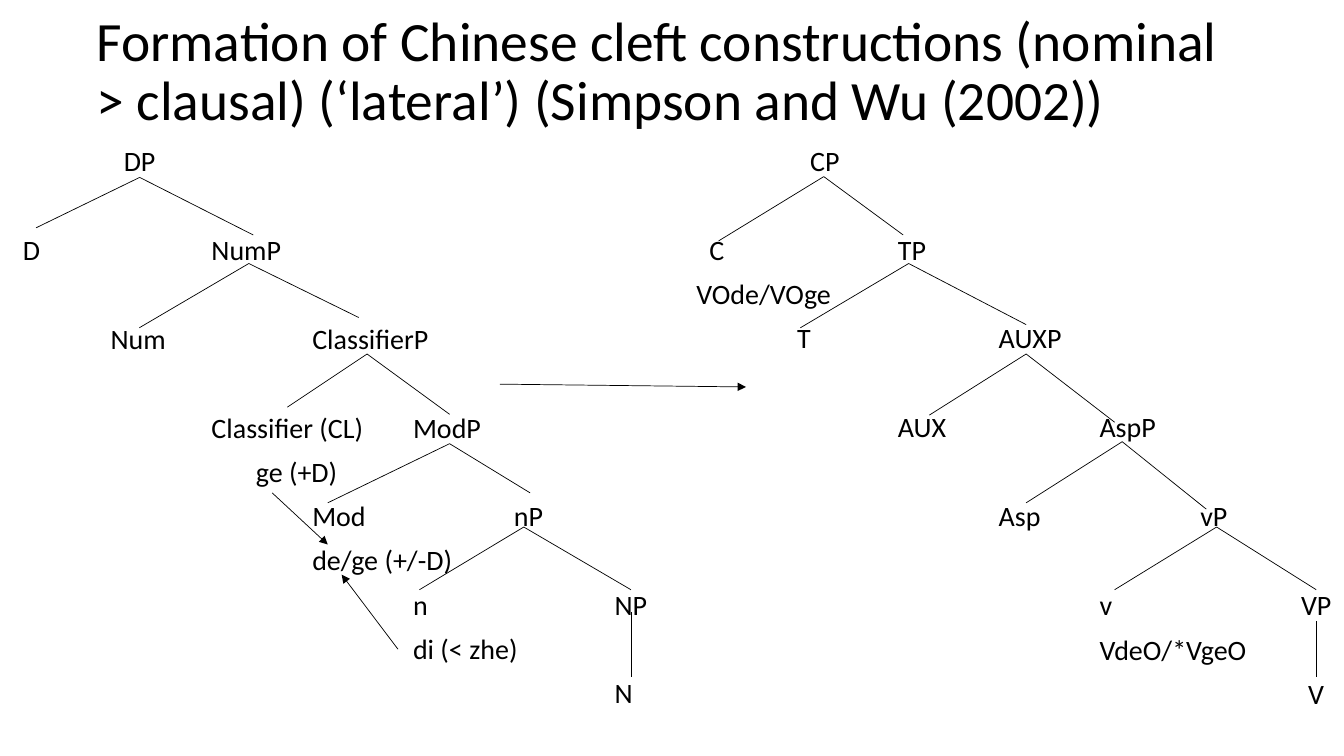
from dataclasses import dataclass

from lxml.etree import SubElement
from pptx import Presentation
from pptx.dml.color import RGBColor
from pptx.enum.shapes import MSO_CONNECTOR
from pptx.enum.text import MSO_ANCHOR, MSO_AUTO_SIZE, PP_ALIGN
from pptx.oxml.ns import qn
from pptx.util import Cm, Pt


@dataclass(frozen=True)
class Theme:
    ink: RGBColor = RGBColor(0, 0, 0)
    font: str = "Calibri"
    title_size: float = 39.6
    label_size: float = 20
    line_spacing: float = 0.9
    row_gap: float = 10
    row_pitch: float = 31.97
    column: float = 2.54
    branch_width: float = 0.5


TITLE = (
    "Formation of Chinese cleft constructions (nominal > clausal) "
    "(‘lateral’) (Simpson and Wu (2002))"
)

NOMINAL_LABELS = [
    (0, [(1.13, "DP")]),
    (2, [(0.13, "D"), (2, "NumP")]),
    (4, [(1, "Num"), (3, "ClassifierP")]),
    (6, [(2, "Classifier (CL)"), (4, "ModP")]),
    (7, [(2.44, "ge (+D)")]),
    (8, [(3, "Mod"), (5, "nP")]),
    (9, [(3, "de/ge (+/-D)")]),
    (10, [(4, "n"), (6, "NP")]),
    (11, [(4, "di (< zhe)")]),
    (12, [(6, "N")]),
]
CLAUSAL_LABELS = [
    (0, [(1.13, "CP")]),
    (2, [(0.13, "C"), (2, "TP")]),
    (3, [(0, "VOde/VOge")]),
    (4, [(1, "T"), (3, "AUXP")]),
    (6, [(2, "AUX"), (4, "AspP")]),
    (8, [(3, "Asp"), (5, "vP")]),
    (10, [(4, "v"), (6, "VP")]),
    (11, [(4, "VdeO/*VgeO")]),
    (12, [(6.07, "V")]),
]

NOMINAL_BRANCHES = [
    ((3.52, 4.47), (0.91, 5.74), (6.38, 5.92)),
    ((6.27, 6.64), (3.51, 8.26), (9.04, 8.0)),
    ((9.25, 8.92), (7.24, 10.26), (11.33, 10.44)),
    ((11.33, 11.18), (8.26, 12.67), (13.36, 12.42)),
    ((13.2, 13.28), (10.57, 14.86), (15.9, 14.86)),
    ((15.9, 15.42), (15.9, 17.07)),
]
CLAUSAL_BRANCHES = [
    ((20.76, 4.45), (18.11, 6.07), (22.76, 5.92)),
    ((22.9, 6.64), (20.17, 8.26), (25.86, 8.18)),
    ((25.86, 8.92), (23.42, 10.46), (28.09, 10.64)),
    ((28.28, 11.13), (25.86, 12.67), (30.4, 12.83)),
    ((30.66, 13.28), (28.09, 14.86), (33.17, 14.86)),
    ((33.17, 15.65), (33.17, 17.07)),
]
ARROWS = [
    ((12.6, 9.68), (18.8, 9.75)),
    ((6.86, 12.42), (8.26, 13.72)),
    ((10.03, 16.36), (8.61, 14.48)),
]


def write(paragraph, text, *, theme, size, space_before=0):
    paragraph.alignment = PP_ALIGN.LEFT
    paragraph.line_spacing = theme.line_spacing
    paragraph.space_before = Pt(space_before)
    run = paragraph.add_run()
    run.text = text
    run.font.name = theme.font
    run.font.size = Pt(size)
    run.font.color.rgb = theme.ink


class TreeSlide:
    def __init__(self, slide, theme):
        self.slide = slide
        self.theme = theme

    def title(self, text, left, top, width, height):
        heading = self.slide.shapes.title
        heading.left, heading.top = Cm(left), Cm(top)
        heading.width, heading.height = Cm(width), Cm(height)
        frame = heading.text_frame
        frame.auto_size = MSO_AUTO_SIZE.NONE
        frame.vertical_anchor = MSO_ANCHOR.MIDDLE
        write(frame.paragraphs[0], text, theme=self.theme, size=self.theme.title_size)

    def labels(self, rows, left, top, width, height):
        theme = self.theme
        box = self.slide.shapes.add_textbox(Cm(left), Cm(top), Cm(width), Cm(height))
        frame = box.text_frame
        frame.word_wrap = True
        frame.margin_right = 0
        previous = -1
        for row, nodes in rows:
            paragraph = frame.paragraphs[0] if previous < 0 else frame.add_paragraph()
            skipped = row - previous - 1
            write(
                paragraph,
                "".join(("\t" if column else "") + node for column, node in nodes),
                theme=theme,
                size=theme.label_size,
                space_before=theme.row_gap + skipped * theme.row_pitch,
            )
            self.tab_stops(paragraph, [column for column, _ in nodes if column])
            previous = row

    def tab_stops(self, paragraph, columns):
        if columns:
            stops = SubElement(paragraph._p.get_or_add_pPr(), qn("a:tabLst"))
            for column in columns:
                position = Cm(column * self.theme.column)
                SubElement(stops, qn("a:tab"), pos=str(position), algn="l")

    def line(self, start, end, arrow=False):
        connector = self.slide.shapes.add_connector(
            MSO_CONNECTOR.STRAIGHT, *(Cm(value) for value in start + end)
        )
        connector.line.color.rgb = self.theme.ink
        connector.line.width = Pt(self.theme.branch_width)
        properties = connector._element.spPr
        if arrow:
            SubElement(properties.find(qn("a:ln")), qn("a:tailEnd"), type="triangle")
        SubElement(properties, qn("a:effectLst"))

    def branches(self, nodes):
        for apex, *children in nodes:
            for child in children:
                self.line(apex, child)


def main():
    presentation = Presentation()
    presentation.slide_width = Cm(33.87)
    presentation.slide_height = Cm(19.05)
    slide = presentation.slides.add_slide(presentation.slide_layouts[5])
    page = TreeSlide(slide, Theme())
    page.title(TITLE, 2.18, 0, 29.21, 3.68)
    page.labels(NOMINAL_LABELS, 0, 3.58, 18.08, 15.47)
    page.labels(CLAUSAL_LABELS, 17.3, 3.58, 16.57, 15.47)
    page.branches(NOMINAL_BRANCHES + CLAUSAL_BRANCHES)
    for start, end in ARROWS:
        page.line(start, end, arrow=True)
    presentation.save("out.pptx")


if __name__ == "__main__":
    main()
